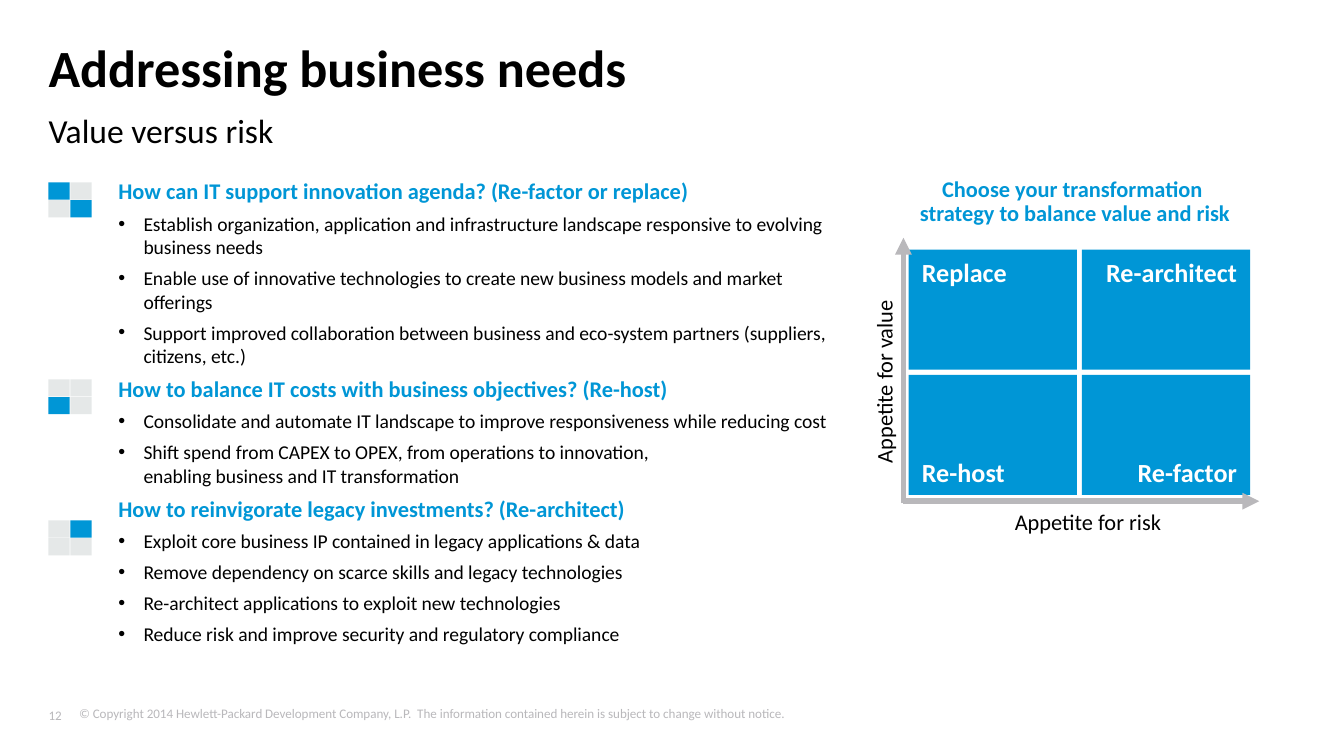
from copy import deepcopy
from dataclasses import dataclass

from lxml import etree
from pptx import Presentation
from pptx.dml.color import RGBColor
from pptx.enum.shapes import MSO_CONNECTOR, MSO_SHAPE
from pptx.enum.text import MSO_ANCHOR, PP_ALIGN
from pptx.oxml.ns import qn
from pptx.util import Pt

RECT = MSO_SHAPE.RECTANGLE
LINE = MSO_CONNECTOR.STRAIGHT
LEFT, MID, RIGHT = PP_ALIGN.LEFT, PP_ALIGN.CENTER, PP_ALIGN.RIGHT
TOP, CENTER, BOTTOM = MSO_ANCHOR.TOP, MSO_ANCHOR.MIDDLE, MSO_ANCHOR.BOTTOM


@dataclass(frozen=True)
class Theme:
    font: str = "Calibri"
    blue: str = "0096D6"
    pale: str = "E5E8E8"
    gray: str = "B9B8BB"
    black: str = "000000"
    white: str = "FFFFFF"
    title: float = 28
    sub: float = 18
    label: float = 14
    head: float = 12
    body: float = 10.5
    foot: float = 7


@dataclass(frozen=True)
class Box:
    x: float
    y: float
    w: float
    h: float


@dataclass(frozen=True)
class Topic:
    head: str
    points: tuple
    top: float     # top of the grid icon
    lit: tuple     # blue (row, column) cells of the icon


@dataclass(frozen=True)
class Cell:
    text: str
    row: int
    col: int


THEME = Theme()
PAD = (7.2, 3.6, 7.2, 3.6)
FLUSH = (0, 0, 0, 0)
EDGE = 26

TOPICS = (
    Topic("How can IT support innovation agenda? (Re-factor or replace)", (
        "Establish organization, application and infrastructure landscape "
        "responsive to evolving business needs",
        "Enable use of innovative technologies to create new business models "
        "and market offerings",
        "Support improved collaboration between business and eco-system "
        "partners (suppliers, citizens, etc.)",
    ), 97.7, ((0, 0), (1, 1))),
    Topic("How to balance IT costs with business objectives? (Re-host)", (
        "Consolidate and automate IT landscape to improve responsiveness "
        "while reducing cost",
        "Shift spend from CAPEX to OPEX, from operations to innovation, \n"
        "enabling business and IT transformation",
    ), 203.2, ((1, 0),)),
    Topic("How to reinvigorate legacy investments? (Re-architect)", (
        "Exploit core business IP contained in legacy applications & data",
        "Remove dependency on scarce skills and legacy technologies",
        "Re-architect applications to exploit new technologies",
        "Reduce risk and improve security and regulatory compliance",
    ), 278.8, ((0, 1),)),
)
CELLS = (
    Cell("Replace", 0, 0), Cell("Re-architect", 0, 1),
    Cell("Re-host", 1, 0), Cell("Re-factor", 1, 1),
)


def frame(shape, inset: tuple = PAD, anchor=TOP):
    """Set wrap, margins and anchor of a shape's text frame."""
    body = shape.text_frame
    body.word_wrap = True
    body.vertical_anchor = anchor
    (body.margin_left, body.margin_top,
     body.margin_right, body.margin_bottom) = map(Pt, inset)
    return body


def write(body, text: str, *, size: float, color: str = THEME.black,
          bold: bool = False, align=LEFT, after: float = 0,
          lead: float = 0, bullet: bool = False) -> None:
    """Add one paragraph, filling the empty first one if it is still free."""
    para = body.paragraphs[0]
    if para.runs:
        para = body.add_paragraph()
    para.text = text
    para.alignment = align
    para.space_after = Pt(after)
    if lead:
        para.line_spacing = Pt(lead)
    if bullet:
        props = para._p.get_or_add_pPr()
        props.set("marL", str(Pt(13.5)))
        props.set("indent", str(-Pt(13.5)))
        etree.SubElement(props, qn("a:buFont"), typeface="Arial")
        etree.SubElement(props, qn("a:buChar"), char="•")
    for run in para.runs:
        font = run.font
        font.name, font.size, font.bold = THEME.font, Pt(size), bold
        font.color.rgb = RGBColor.from_string(color)
    for gap in para._p.findall(qn("a:br")):
        gap.append(deepcopy(para.runs[0]._r.rPr))


def add_text(slide, box: Box, text: str = "", *, inset: tuple = PAD,
             anchor=TOP, turn: float = 0, **style):
    shape = slide.shapes.add_textbox(
        Pt(box.x), Pt(box.y), Pt(box.w), Pt(box.h))
    shape.rotation = turn
    body = frame(shape, inset, anchor)
    if text:
        write(body, text, **style)
    return body


def add_rect(slide, box: Box, color: str):
    shape = slide.shapes.add_shape(
        RECT, Pt(box.x), Pt(box.y), Pt(box.w), Pt(box.h))
    shape.shadow.inherit = False
    shape.fill.solid()
    shape.fill.fore_color.rgb = RGBColor.from_string(color)
    shape.line.fill.background()
    return shape


def add_arrow(slide, x1: float, y1: float, x2: float, y2: float) -> None:
    arrow = slide.shapes.add_connector(LINE, Pt(x1), Pt(y1), Pt(x2), Pt(y2))
    arrow.line.width = Pt(3)
    arrow.line.color.rgb = RGBColor.from_string(THEME.gray)
    etree.SubElement(arrow.line._get_or_add_ln(), qn("a:tailEnd"),
                     type="triangle")
    etree.SubElement(arrow._element.spPr, qn("a:effectLst"))


def add_icon(slide, topic: Topic) -> None:
    for row in range(2):
        for col in range(2):
            color = THEME.blue if (row, col) in topic.lit else THEME.pale
            box = Box(EDGE + 11.7 * col, topic.top + 9.5 * row, 11.4, 9.2)
            add_rect(slide, box, color)


def add_cell(slide, cell: Cell) -> None:
    box = Box(486.8 + 92.8 * cell.col, 133.8 + 67.1 * cell.row, 90.2, 64.2)
    body = frame(add_rect(slide, box, THEME.blue),
                 anchor=BOTTOM if cell.row else TOP)
    write(body, cell.text, size=THEME.label, color=THEME.white, bold=True,
          align=RIGHT if cell.col else LEFT)


def main() -> None:
    deck = Presentation()
    deck.slide_width, deck.slide_height = Pt(720), Pt(405)
    slide = deck.slides.add_slide(deck.slide_layouts[6])

    add_text(slide, Box(EDGE, 18.7, 639.4, 33.8), "Addressing business needs",
             inset=FLUSH, size=THEME.title, bold=True)
    add_text(slide, Box(EDGE, 59, 639.4, 21.6), "Value versus risk",
             inset=FLUSH, size=THEME.sub, after=4)

    topics = add_text(slide, Box(63.4, 95, 384.5, 254.2), inset=FLUSH)
    for topic in TOPICS:
        write(topics, topic.head, size=THEME.head, color=THEME.blue,
              bold=True, after=4)
        for point in topic.points:
            write(topics, point, size=THEME.body, after=4, bullet=True)
        add_icon(slide, topic)

    add_text(slide, Box(480.2, 95, 191.5, 23.8),
             "Choose your transformation \nstrategy to balance value and risk",
             inset=FLUSH, size=THEME.head, color=THEME.blue, bold=True,
             align=MID, after=4, lead=13)
    for cell in CELLS:
        add_cell(slide, cell)
    add_text(slide, Box(416.2, 193.7, 114.5, 21.6), "Appetite for value",
             turn=270, size=THEME.head, align=MID)
    add_text(slide, Box(507.6, 268.6, 150.5, 21.6), "Appetite for risk",
             size=THEME.head, align=MID)
    add_arrow(slide, 484, 269.5, 484, 127.4)
    add_arrow(slide, 484, 268.5, 674.6, 268.5)

    add_text(slide, Box(EDGE, 377.3, 25.2, 11.5), "12",
             inset=(0, 3.6, 7.2, 3.6), anchor=CENTER,
             size=THEME.foot, color=THEME.gray)
    add_text(slide, Box(35.3, 374.4, 630.7, 18),
             "© Copyright 2014 Hewlett-Packard Development Company, L.P.  "
             "The information contained herein is subject to change "
             "without notice.", anchor=TOP,
             size=THEME.foot, color=THEME.gray)
    deck.save("out.pptx")


if __name__ == "__main__":
    main()
